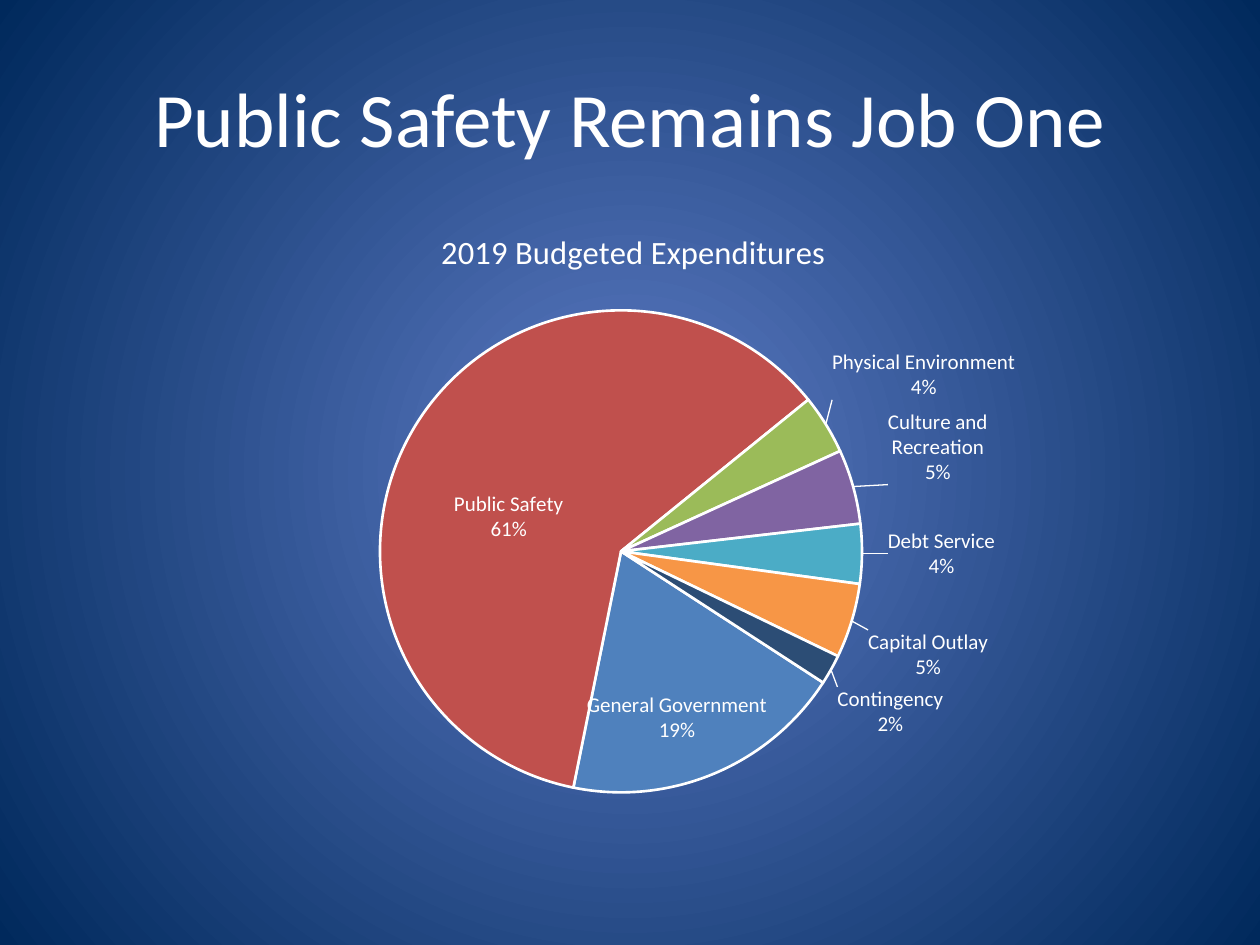
from dataclasses import dataclass

from lxml import etree
from pptx import Presentation
from pptx import util as u
from pptx.chart.data import CategoryChartData
from pptx.dml.color import RGBColor
from pptx.enum import chart as charts, text
from pptx.oxml import parse_xml
from pptx.oxml.ns import nsdecls, qn


@dataclass(frozen=True)
class Theme:
    font: str = "Calibri"
    ink: str = "FFFFFF"
    glow: str = "5E7CC5"
    edge: str = "00295C"
    heading: float = 44
    chart_title: float = 18.6
    label: float = 12
    border: float = 1.5


THEME = Theme()
WIDTH, HEIGHT = u.Inches(10), u.Inches(7.5)

# category, percent, colour, label position, label shift as shares of the chart
EXPENDITURES = [
    ("General Government", 19, "4F81BD", "ctr", (0.01, 0.08)),
    ("Public Safety", 61, "C0504D", "ctr", (-0.01, 0.04)),
    ("Physical Environment", 4, "9BBB59", "outEnd", (0, -0.03)),
    ("Culture and Recreation", 5, "8064A2", "outEnd", (0.03, 0)),
    ("Debt Service", 4, "4BACC6", "outEnd", (0.02, 0)),
    ("Capital Outlay", 5, "F79646", "outEnd", (0.01, 0.01)),
    ("Contingency", 2, "2C4D75", "outEnd", (0, 0.02)),
]


def style(font, size):
    font.name = THEME.font
    font.size = u.Pt(size)
    font.bold = False
    font.color.rgb = RGBColor.from_string(THEME.ink)


def share_box(left, top, width, height):
    """Turn shares of the slide's size into lengths."""
    return (int(WIDTH * left), int(HEIGHT * top),
            int(WIDTH * width), int(HEIGHT * height))


def paint_background(slide):
    fill = slide.background.fill
    fill.gradient()
    for stop, position, colour in zip(fill.gradient_stops, (0, 1),
                                      (THEME.glow, THEME.edge)):
        stop.position = position
        stop.color.rgb = RGBColor.from_string(colour)
    linear = next(slide.background._cSld.iter(qn("a:lin")))
    linear.getparent().replace(linear, parse_xml(
        f'<a:path {nsdecls("a")} path="circle">'
        '<a:fillToRect l="50000" t="50000" r="50000" b="50000"/></a:path>'))


def add_heading(slide, wording):
    frame = slide.shapes.add_textbox(*share_box(0.05, 0.04, 0.9, 1 / 6)).text_frame
    frame.word_wrap = True
    frame.vertical_anchor = text.MSO_ANCHOR.MIDDLE
    frame.text = wording
    frame.paragraphs[0].alignment = text.PP_ALIGN.CENTER
    style(frame.paragraphs[0].runs[0].font, THEME.heading)


def manual_layout(**shares):
    layout = etree.Element(qn("c:layout"))
    manual = etree.SubElement(layout, qn("c:manualLayout"))
    for tag, value in shares.items():
        etree.SubElement(manual, qn(f"c:{tag}"), val=str(value))
    return layout


def title_chart(chart, wording):
    title = chart.chart_title
    title.text_frame.text = wording
    style(title.text_frame.paragraphs[0].runs[0].font, THEME.chart_title)
    for old in title._element.findall(qn("c:layout")):
        title._element.remove(old)
    title._element.find(qn("c:tx")).addnext(
        manual_layout(xMode="edge", yMode="edge", x=0.29, y=0.04))


def place_pie(chart):
    plot_area = chart._chartSpace.chart.plotArea
    for old in plot_area.findall(qn("c:layout")):
        plot_area.remove(old)
    plot_area.insert(0, manual_layout(
        layoutTarget="inner", xMode="edge", yMode="edge",
        x=0.23, y=0.167, w=0.522, h=0.702))
    pie = plot_area.find(qn("c:pieChart"))
    for old in pie.findall(qn("c:firstSliceAng")):
        pie.remove(old)
    etree.SubElement(pie, qn("c:firstSliceAng"), val="123")


def shifted_label(index, position, shift):
    label = etree.Element(qn("c:dLbl"))
    etree.SubElement(label, qn("c:idx"), val=str(index))
    label.append(manual_layout(x=shift[0], y=shift[1]))
    settings = {"dLblPos": position, "showLegendKey": 0, "showVal": 0,
                "showCatName": 1, "showSerName": 0, "showPercent": 1,
                "showBubbleSize": 0}
    for tag, value in settings.items():
        etree.SubElement(label, qn(f"c:{tag}"), val=str(value))
    etree.SubElement(label, qn("c:separator")).text = "\n"
    return label


def label_slices(series):
    labels = series.data_labels
    style(labels.font, THEME.label)
    labels.number_format = "0%"
    labels.number_format_is_linked = False
    labels.show_category_name = labels.show_percentage = True
    labels.show_value = False
    labels.position = charts.XL_LABEL_POSITION.BEST_FIT
    node = labels._element
    for old in node.findall(qn("c:showLeaderLines")):
        node.remove(old)
    etree.SubElement(node, qn("c:separator")).text = "\n"
    etree.SubElement(node, qn("c:showLeaderLines"), val="1")
    node.append(parse_xml(
        f'<c:leaderLines {nsdecls("c", "a")}><c:spPr><a:ln w="9525"><a:solidFill>'
        f'<a:srgbClr val="{THEME.ink}"/></a:solidFill></a:ln></c:spPr></c:leaderLines>'))
    for index, (_, _, _, position, shift) in enumerate(EXPENDITURES):
        node.insert(index, shifted_label(index, position, shift))


def colour_slices(series):
    for index, (_, _, colour, _, _) in enumerate(EXPENDITURES):
        part = series.points[index].format
        part.fill.solid()
        part.fill.fore_color.rgb = RGBColor.from_string(colour)
        part.line.color.rgb = RGBColor.from_string(THEME.ink)
        part.line.width = u.Pt(THEME.border)


def add_expenditure_pie(slide):
    budget = CategoryChartData()
    budget.categories = [row[0] for row in EXPENDITURES]
    budget.add_series("Series 1", [row[1] for row in EXPENDITURES])
    chart = slide.shapes.add_chart(
        charts.XL_CHART_TYPE.PIE, *share_box(0.133, 0.207, 0.733, 0.727), budget).chart
    style(chart.font, THEME.label)
    chart.has_legend = False
    title_chart(chart, "2019 Budgeted Expenditures")
    place_pie(chart)
    series = chart.plots[0].series[0]
    colour_slices(series)
    label_slices(series)


def main():
    deck = Presentation()
    deck.slide_width, deck.slide_height = WIDTH, HEIGHT
    slide = deck.slides.add_slide(deck.slide_layouts[6])
    paint_background(slide)
    add_heading(slide, "Public Safety Remains Job One")
    add_expenditure_pie(slide)
    deck.save("out.pptx")


if __name__ == "__main__":
    main()
